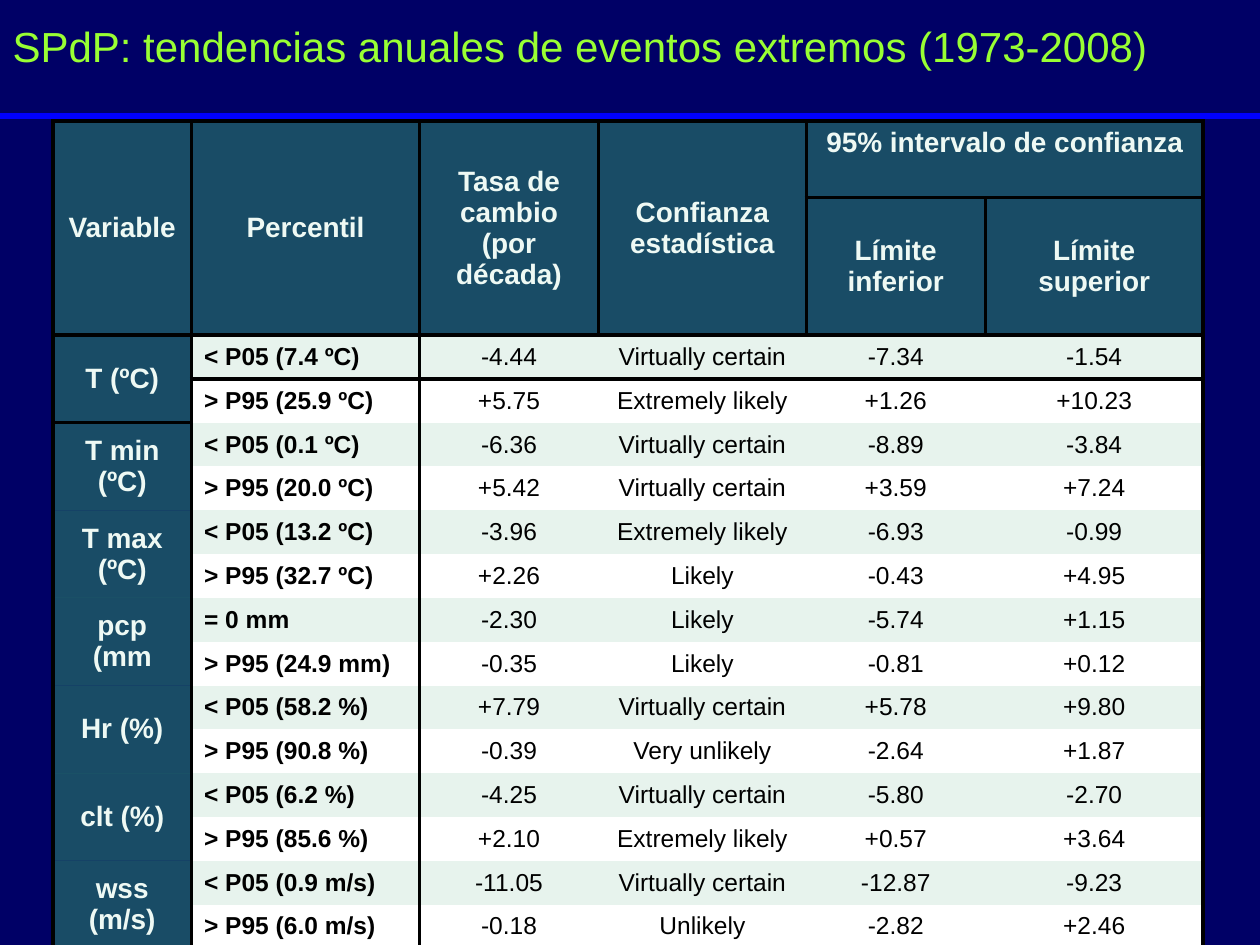
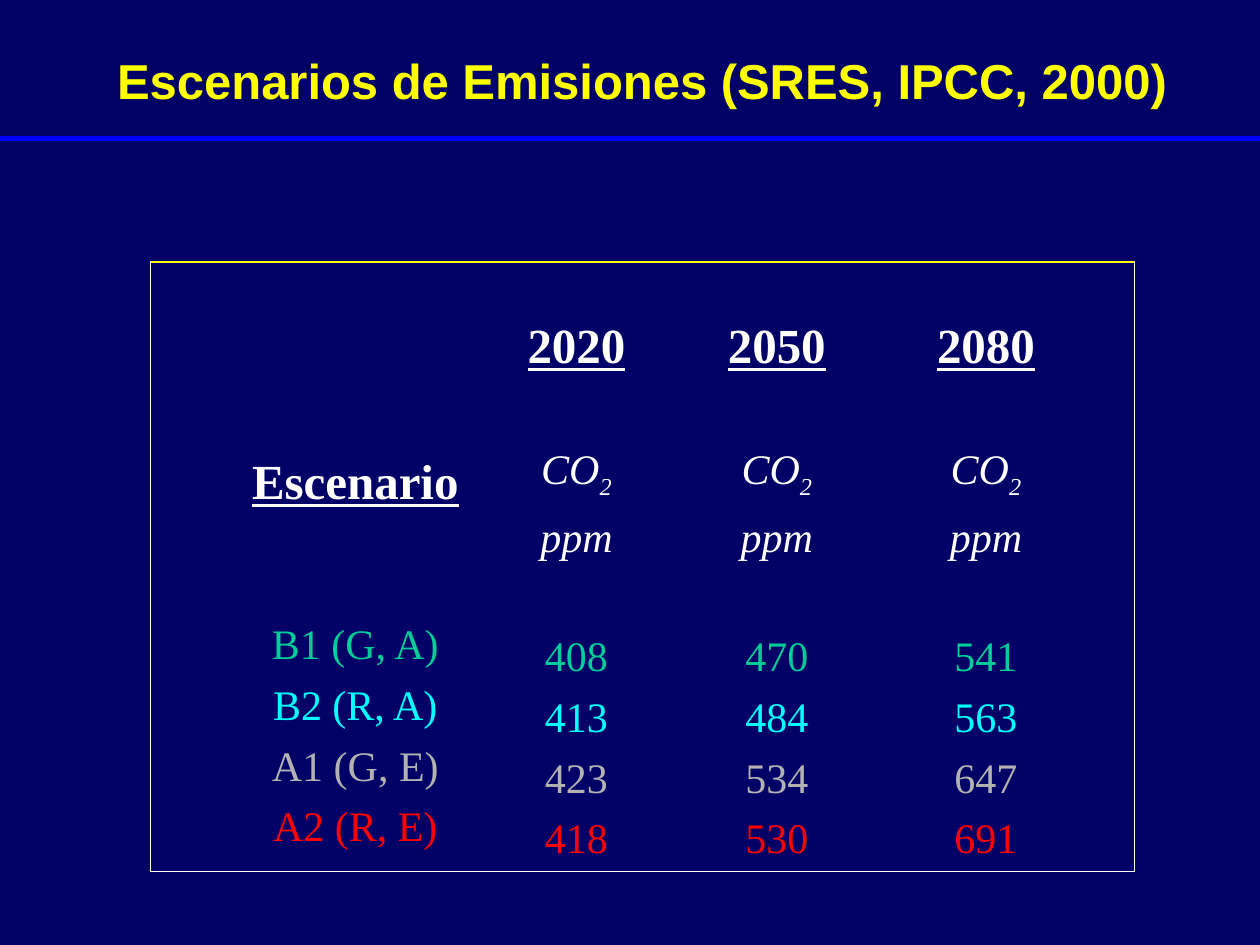
"""Builds two slides: trends of extreme events and emission scenarios."""
from lxml.etree import SubElement
from pptx import Presentation
from pptx.dml.color import RGBColor
from pptx.enum.shapes import MSO_CONNECTOR
from pptx.enum.text import MSO_ANCHOR, PP_ALIGN
from pptx.oxml.ns import qn
from pptx.util import Inches, Pt

COLORS = {
    "background": "000066", "rule": "0000FF", "lime": "99FF33",
    "yellow": "FFFF00", "white": "FFFFFF", "black": "000000",
    "header": "339966", "header_text": "EEF9F4", "band": "E7F3ED",
    "B1": "00CC99", "B2": "00FFFF", "A1": "B2B2B2", "A2": "FF0000",
}
NO_STYLE = "{2D5ABB26-0587-4C30-8999-92F81FD0307C}"
SANS, SERIF = "Arial", "Times New Roman"

TREND_TITLE = "SPdP: tendencias anuales de eventos extremos (1973-2008)"
HEADERS = ["Variable", "Percentil", "Tasa de cambio\n(por década)",
           "Confianza estadística", "95% intervalo de confianza"]
LIMITS = ["Límite inferior", "Límite superior"]
TRENDS = [
    ("T (ºC)",
     ("< P05 (7.4 ºC)", "-4.44", "Virtually certain", "-7.34", "-1.54"),
     ("> P95 (25.9 ºC)", "+5.75", "Extremely likely", "+1.26", "+10.23")),
    ("T min (ºC)",
     ("< P05 (0.1 ºC)", "-6.36", "Virtually certain", "-8.89", "-3.84"),
     ("> P95 (20.0 ºC)", "+5.42", "Virtually certain", "+3.59", "+7.24")),
    ("T max (ºC)",
     ("< P05 (13.2 ºC)", "-3.96", "Extremely likely", "-6.93", "-0.99"),
     ("> P95 (32.7 ºC)", "+2.26", "Likely", "-0.43", "+4.95")),
    ("pcp (mm",
     ("= 0 mm", "-2.30", "Likely", "-5.74", "+1.15"),
     ("> P95 (24.9 mm)", "-0.35", "Likely", "-0.81", "+0.12")),
    ("Hr (%)",
     ("< P05 (58.2 %)", "+7.79", "Virtually certain", "+5.78", "+9.80"),
     ("> P95 (90.8 %)", "-0.39", "Very unlikely", "-2.64", "+1.87")),
    ("clt (%)",
     ("< P05 (6.2 %)", "-4.25", "Virtually certain", "-5.80", "-2.70"),
     ("> P95 (85.6 %)", "+2.10", "Extremely likely", "+0.57", "+3.64")),
    ("wss (m/s)",
     ("< P05 (0.9 m/s)", "-11.05", "Virtually certain", "-12.87", "-9.23"),
     ("> P95 (6.0 m/s)", "-0.18", "Unlikely", "-2.82", "+2.46")),
]
COL_WIDTHS = [1.1, 1.81, 1.42, 1.65, 1.42, 1.73]
ROW_HEIGHTS = [0.61, 1.09] + [0.348] * (2 * len(TRENDS))

SCENARIO_TITLE = "Escenarios de Emisiones (SRES, IPCC, 2000)"
SCENARIOS = ["B1 (G, A)", "B2 (R, A)", "A1 (G, E)", "A2 (R, E)"]
CO2 = {"2020": (4.08, [408, 413, 423, 418]),
       "2050": (5.67, [470, 484, 534, 530]),
       "2080": (7.33, [541, 563, 647, 691])}
LINE_GAP, BLOCK_GAP, LABEL_GAP = 5.9, 39.4, 61.7


def rgb(name):
    return RGBColor.from_string(COLORS[name])


def style(p, size, color, font, bold=False, italic=False, underline=False):
    for r in p.runs:
        f = r.font
        f.size, f.name, f.bold, f.italic = Pt(size), font, bold, italic
        f.underline = underline
        f.color.rgb = rgb(color)


def add_slide(prs, title, box, size, color, bold, align, rule_y):
    s = prs.slides.add_slide(prs.slide_layouts[5])
    sp = s.shapes.title
    sp.left, sp.top, sp.width, sp.height = map(Inches, box)
    tf = sp.text_frame
    tf.text, tf.word_wrap, tf.vertical_anchor = title, False, MSO_ANCHOR.MIDDLE
    p = tf.paragraphs[0]
    p.alignment = align
    style(p, size, color, SANS, bold)
    y = Inches(rule_y)
    rule = s.shapes.add_connector(MSO_CONNECTOR.STRAIGHT, 0, y, prs.slide_width, y)
    rule.line.color.rgb, rule.line.width = rgb("rule"), Pt(3)
    SubElement(rule._element.spPr, qn("a:effectLst"))
    return s


def add_table(s, left, top, widths, heights):
    frame = s.shapes.add_table(len(heights), len(widths), Inches(left), Inches(top),
                               Inches(sum(widths)), Inches(sum(heights)))
    table = frame.table
    table.first_row = table.horz_banding = False
    table._tbl.tblPr.find(qn("a:tableStyleId")).text = NO_STYLE
    for col, width in zip(table.columns, widths):
        col.width = Inches(width)
    for row, height in zip(table.rows, heights):
        row.height = Inches(height)
    return table


def set_borders(cell, sides, color, width):
    tcPr = cell._tc.get_or_add_tcPr()
    for side in "LRTB":
        if side in sides:
            ln = SubElement(tcPr, qn(f"a:ln{side}"), w=str(Pt(width)))
            fill = SubElement(ln, qn("a:solidFill"))
            SubElement(fill, qn("a:srgbClr"), val=COLORS[color])


def set_fill(cell, color, alpha=None):
    cell.fill.solid()
    cell.fill.fore_color.rgb = rgb(color)
    if alpha:
        clr = cell._tc.tcPr.find(qn("a:solidFill")).find(qn("a:srgbClr"))
        SubElement(clr, qn("a:alpha"), val=str(alpha * 1000))


def trend_sides(r, c, last_row, last_col):
    if r < 2:
        return "LRTB"
    return (("L" if c < 2 else "") + ("R" if c in (0, last_col) else "")
            + ("T" if r == 2 else "") + ("B" if r == last_row else ""))


def trend_slide(prs):
    s = add_slide(prs, TREND_TITLE, (0, 0, 10, 0.72), 24, "lime", False,
                  PP_ALIGN.LEFT, 0.92)
    table = add_table(s, 0.42, 0.96, COL_WIDTHS, ROW_HEIGHTS)
    rows = [HEADERS + [""], [""] * 4 + LIMITS]
    for variable, low, high in TRENDS:
        rows += [(variable, *low), ("", *high)]
    last_row, last_col = len(rows) - 1, len(COL_WIDTHS) - 1

    for c in range(4):
        table.cell(0, c).merge(table.cell(1, c))
    table.cell(0, 4).merge(table.cell(0, 5))
    for r in range(2, len(rows), 2):
        table.cell(r, 0).merge(table.cell(r + 1, 0))

    for r, texts in enumerate(rows):
        for c, text in enumerate(texts):
            cell = table.cell(r, c)
            sides = trend_sides(r, c, last_row, last_col)
            if cell.is_spanned:
                sides = sides.replace("T" if r else "L", "")
            set_borders(cell, sides, "black", 2.25)
            head = r < 2 or c == 0
            if head:
                set_fill(cell, "header", 50)
            else:
                set_fill(cell, "white" if r % 2 else "band")
            if not text:
                continue
            cell.text_frame.text = text
            cell.vertical_anchor = MSO_ANCHOR.MIDDLE
            for p in cell.text_frame.paragraphs:
                p.alignment = PP_ALIGN.LEFT if c == 1 and not head else PP_ALIGN.CENTER
                style(p, 16 if head else 14, "header_text" if head else "black",
                      SANS, head or c == 1)
    table.cell(0, 4).vertical_anchor = MSO_ANCHOR.TOP


def add_column(s, left, top, width, heading, units, values, gap):
    tf = s.shapes.add_textbox(Inches(left), Inches(top), Inches(width),
                              Inches(6.85 - top)).text_frame
    tf.word_wrap = False
    p = tf.paragraphs[0]
    p.text, p.alignment = heading, PP_ALIGN.CENTER
    style(p, 28, "white", SERIF, bold=True, underline=True)
    lines = [(u, "white", BLOCK_GAP if i == 0 else LINE_GAP, True)
             for i, u in enumerate(units)]
    lines += [(str(v), label[:2], gap if i == 0 else LINE_GAP, False)
              for i, (v, label) in enumerate(zip(values, SCENARIOS))]
    for text, color, before, italic in lines:
        p = tf.add_paragraph()
        p.alignment, p.space_before = PP_ALIGN.CENTER, Pt(before)
        base, *sub = text.split("_")
        p.text = base
        for part in sub:
            r = p.add_run()
            r.text = part
            r.font._element.set("baseline", "-25000")
        style(p, 24, color, SERIF, italic=italic)


def scenario_slide(prs):
    s = add_slide(prs, SCENARIO_TITLE, (0.78, 0.35, 8.63, 0.57), 28, "yellow", True,
                  PP_ALIGN.CENTER, 1.1)
    add_column(s, 1.89, 3.53, 1.86, "Escenario", [], SCENARIOS, LABEL_GAP)
    for year, (left, values) in CO2.items():
        add_column(s, left, 2.45, 0.99, year, ["CO_2", "ppm"], values, BLOCK_GAP)
    cell = add_table(s, 1.19, 2.08, [7.81], [4.84]).cell(0, 0)
    set_borders(cell, "LRB", "white", 0.5)
    set_borders(cell, "T", "yellow", 1)
    tcPr = cell._tc.tcPr
    tcPr.insert(2, tcPr.find(qn("a:lnT")))
    cell.fill.background()


def main():
    prs = Presentation()
    prs.slide_width, prs.slide_height = Inches(10), Inches(7.5)
    fill = prs.slide_master.background.fill
    fill.solid()
    fill.fore_color.rgb = rgb("background")
    trend_slide(prs)
    scenario_slide(prs)
    prs.save("out.pptx")


if __name__ == "__main__":
    main()
